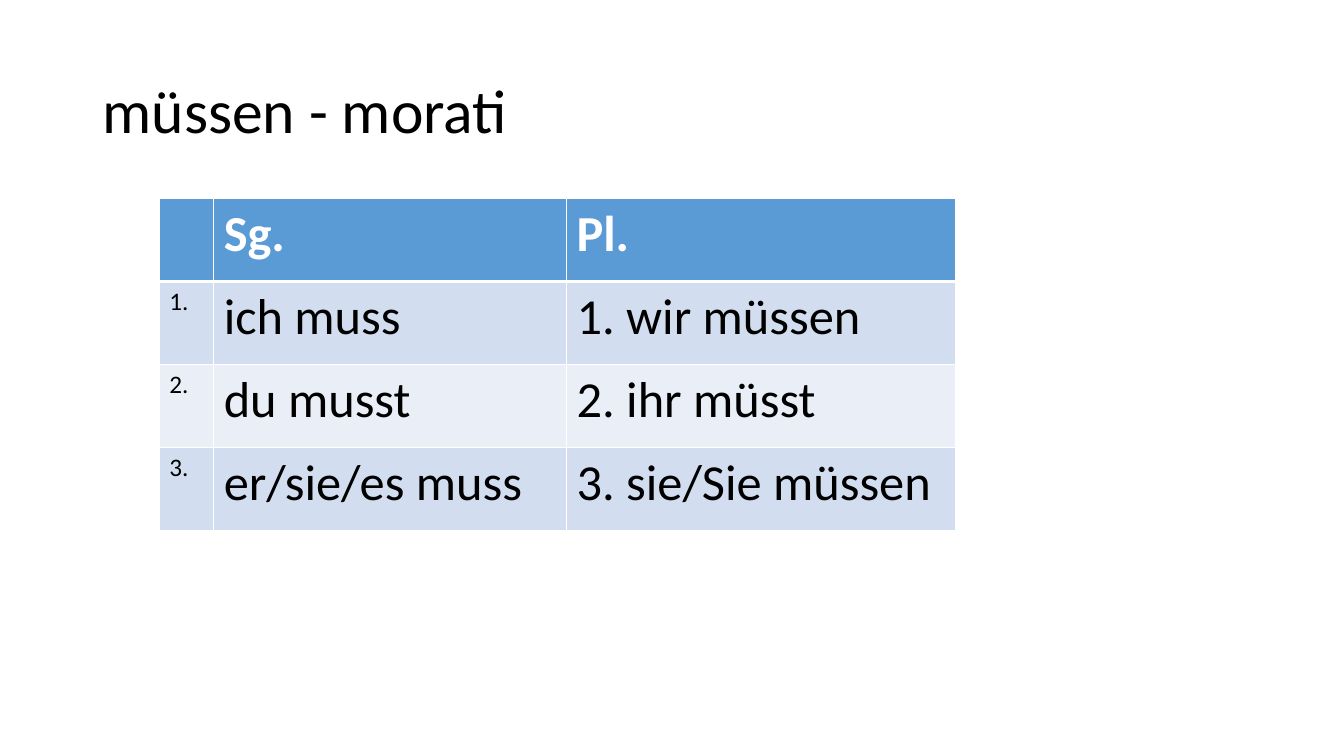
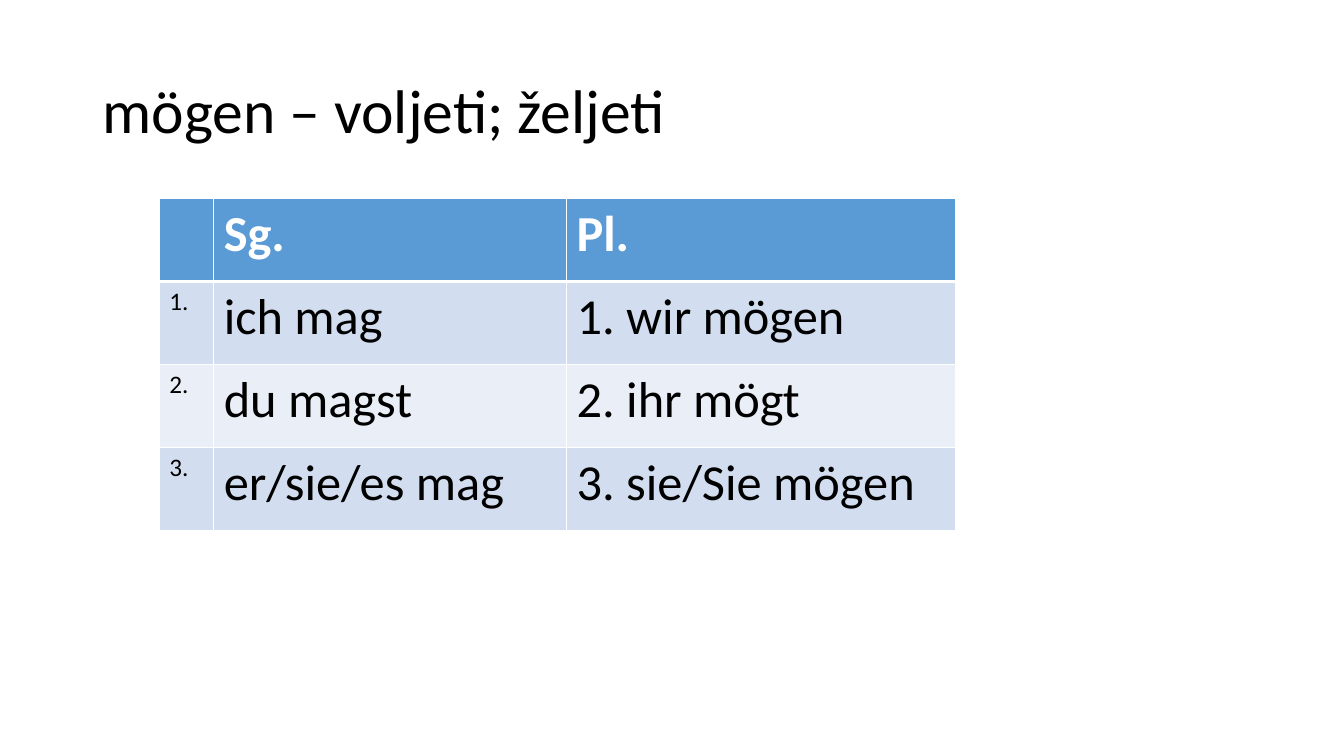
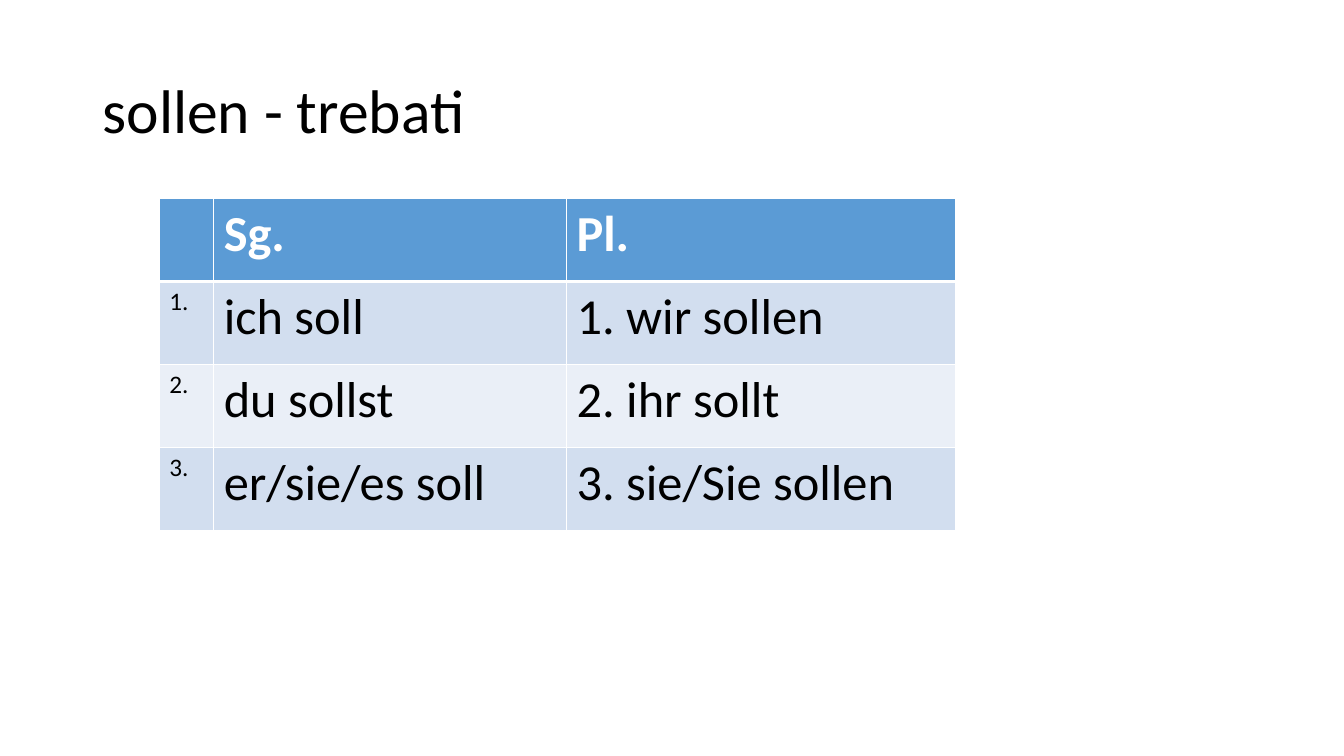
from dataclasses import dataclass

from lxml import etree
from pptx import Presentation
from pptx import util as u
from pptx.dml.color import RGBColor
from pptx.enum import text
from pptx.oxml import ns


@dataclass(frozen=True)
class Theme:
    """Colours, font and sizes that all slides share."""
    font: str = "Calibri"
    ink: str = "000000"
    paper: str = "FFFFFF"
    header: str = "5B9BD5"
    bands: tuple = ("D2DEEF", "EAEFF7")
    title_size: int = 44
    form_size: int = 36
    number_size: int = 18
    thin: int = 1
    thick: int = 3


THEME = Theme()
SLIDE_SIZE = (u.Inches(13.33), u.Inches(7.5))
TITLE_BOX = (6.88, 5.33, 86.25, 19.33)
TABLE_BOX = (11.85, 26.27, 59.26, 43.9)
COLUMN_WEIGHTS = (0.54, 3.5, 3.86)
HEADINGS = ("", "Sg.", "Pl.")
SINGULAR = ("ich", "du", "er/sie/es")
PLURAL = ("wir", "ihr", "sie/Sie")
VERBS = (
    ("müssen - morati", ("muss", "musst", "muss"), ("müssen", "müsst", "müssen")),
    ("mögen – voljeti; željeti", ("mag", "magst", "mag"), ("mögen", "mögt", "mögen")),
    ("sollen - trebati", ("soll", "sollst", "soll"), ("sollen", "sollt", "sollen")),
)


def place(percentages):
    """Turn percentages of the slide into left, top, width and height."""
    return [round(share * SLIDE_SIZE[index % 2] / 100) for index, share in enumerate(percentages)]


def apply(target, values):
    """Set each attribute of the target from a dict."""
    for name, value in values.items():
        setattr(target, name, value)


def format_font(font, size, color, bold=False):
    """Give a font the theme typeface, a size, a colour and a weight."""
    apply(font, {"name": THEME.font, "size": u.Pt(size), "bold": bold})
    font.color.rgb = RGBColor.from_string(color)


def add_title(slide, wording, box):
    """Fill the title placeholder and place it in the box."""
    title = slide.shapes.title
    apply(title, dict(zip(("left", "top", "width", "height"), box)))
    apply(title.text_frame, {
        "text": wording,
        "word_wrap": True,
        "auto_size": text.MSO_AUTO_SIZE.NONE,
        "vertical_anchor": text.MSO_ANCHOR.MIDDLE,
    })
    paragraph = title.text_frame.paragraphs[0]
    apply(paragraph, {"alignment": text.PP_ALIGN.LEFT, "line_spacing": 0.9})
    format_font(paragraph.runs[0].font, THEME.title_size, THEME.ink)


def add_borders(cell, widths):
    """Draw solid borders round a cell, given widths for each side."""
    properties = cell._tc.get_or_add_tcPr()
    for index, (side, width) in enumerate(widths.items()):
        line = etree.Element(ns.qn(f"a:ln{side}"), w=str(u.Pt(width)))
        fill = etree.SubElement(line, ns.qn("a:solidFill"))
        etree.SubElement(fill, ns.qn("a:srgbClr"), val=THEME.paper)
        properties.insert(index, line)


def format_cell(cell, wording, row, column):
    """Write a cell and style it by its row and column."""
    is_header = row == 0
    cell.fill.solid()
    fill_color = THEME.header if is_header else THEME.bands[(row - 1) % 2]
    cell.fill.fore_color.rgb = RGBColor.from_string(fill_color)
    add_borders(cell, {
        "L": THEME.thin,
        "R": THEME.thin,
        "T": THEME.thick if row == 1 else THEME.thin,
        "B": THEME.thick if is_header else THEME.thin,
    })
    if wording:
        cell.text = wording
        size = THEME.form_size if column else THEME.number_size
        color = THEME.paper if is_header else THEME.ink
        format_font(cell.text_frame.paragraphs[0].runs[0].font, size, color, is_header)


def add_conjugation(slide, rows, box):
    """Add a conjugation table with equal rows that fills the box."""
    table = slide.shapes.add_table(len(rows), len(COLUMN_WEIGHTS), *box).table
    for column, weight in zip(table.columns, COLUMN_WEIGHTS):
        column.width = round(box[2] * weight / sum(COLUMN_WEIGHTS))
    for row_index, row in enumerate(rows):
        table.rows[row_index].height = box[3] // len(rows)
        for column_index, wording in enumerate(row):
            format_cell(table.cell(row_index, column_index), wording, row_index, column_index)


def add_verb_slide(presentation, wording, singular, plural):
    """Add a slide with a verb as title and its forms in a table."""
    slide = presentation.slides.add_slide(presentation.slide_layouts.get_by_name("Title Only"))
    persons = zip(SINGULAR, singular, PLURAL, plural)
    rows = [HEADINGS] + [
        (f"{number}.", f"{one} {one_form}", f"{number}. {many} {many_form}")
        for number, (one, one_form, many, many_form) in enumerate(persons, 1)
    ]
    add_title(slide, wording, place(TITLE_BOX))
    add_conjugation(slide, rows, place(TABLE_BOX))


def main():
    """Build the presentation and save it."""
    presentation = Presentation()
    apply(presentation, dict(zip(("slide_width", "slide_height"), SLIDE_SIZE)))
    for verb in VERBS:
        add_verb_slide(presentation, *verb)
    presentation.save("out.pptx")


if __name__ == "__main__":
    main()
